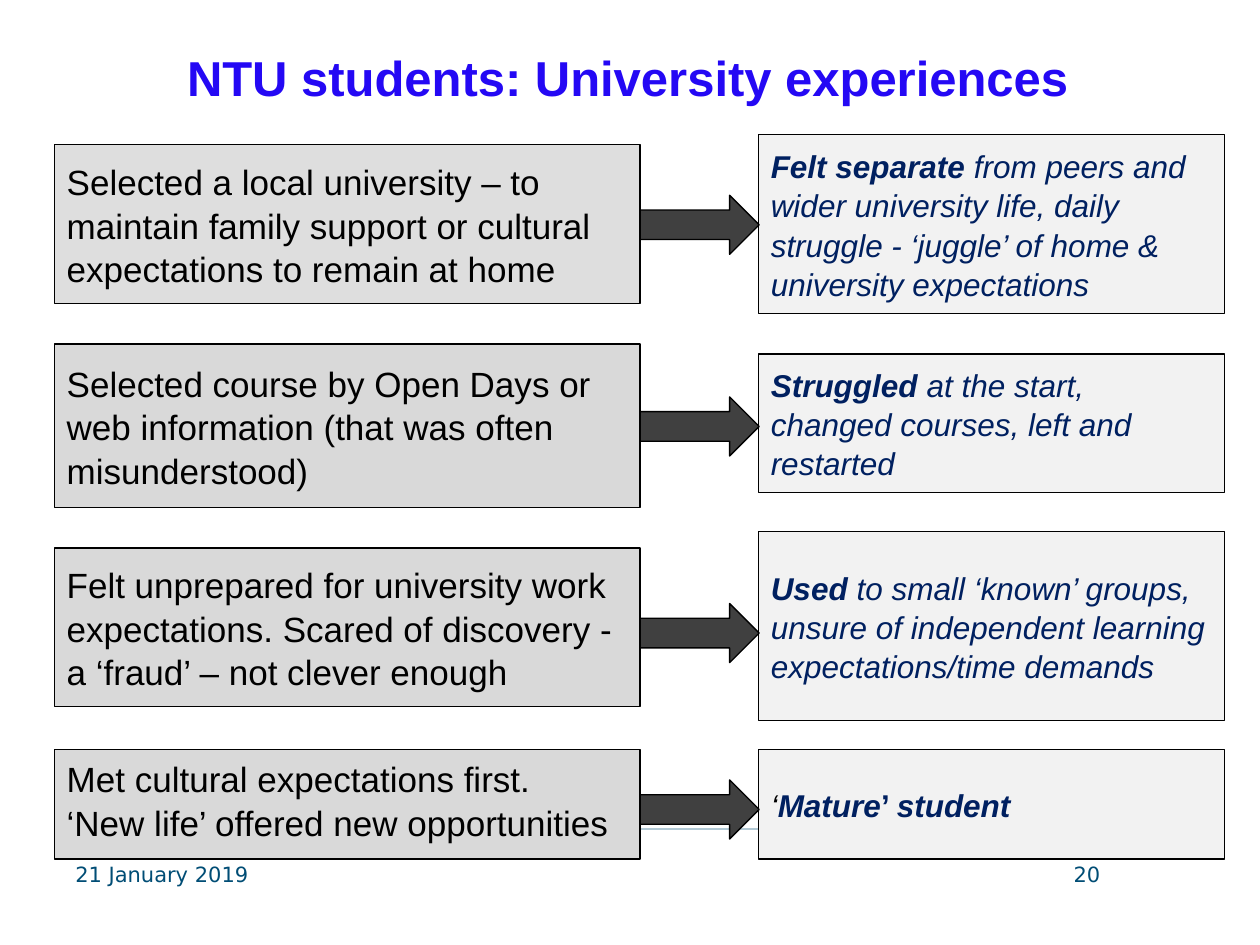
from lxml import etree
from pptx import Presentation
from pptx.dml.color import RGBColor
from pptx.enum.shapes import MSO_CONNECTOR, MSO_SHAPE
from pptx.enum.text import MSO_ANCHOR, PP_ALIGN
from pptx.oxml.ns import qn
from pptx.util import Pt

RECTANGLE = MSO_SHAPE.RECTANGLE
ARROW = MSO_SHAPE.RIGHT_ARROW
STRAIGHT = MSO_CONNECTOR.STRAIGHT
TOP, MIDDLE = MSO_ANCHOR.TOP, MSO_ANCHOR.MIDDLE
LEFT, CENTER, RIGHT = PP_ALIGN.LEFT, PP_ALIGN.CENTER, PP_ALIGN.RIGHT

COLORS = {
    "title": "2408F4",
    "footer": "004D75",
    "rule": "B2C9D5",
    "black": "000000",
    "navy": "002060",
    "first_cause": "DEDEDE",
    "cause": "D9D9D9",
    "effect": "F2F2F2",
    "arrow": "404040",
}

CAUSE_LEFT, CAUSE_WIDTH = 31, 334.8
ARROW_LEFT, ARROW_WIDTH, ARROW_HEIGHT = 365.8, 68, 33.8
EFFECT_LEFT, EFFECT_WIDTH = 433.4, 266.4

BOLD = {"bold": True}
ROWS = [
    {
        "cause": (82.8, 90.7), "effect": (77, 102.2), "arrow": 111.6,
        "fill": "first_cause",
        "lines": ["Selected a local university – to maintain family support "
                  "or cultural expectations to remain at home"],
        "spans": [("Felt separate ", BOLD),
                  ("from peers and wider university life, daily struggle - "
                   "‘juggle’ of home & university expectations", {})],
    },
    {
        "cause": (196.6, 93.6), "effect": (202.3, 79.2), "arrow": 226.8,
        "lines": ["Selected course by Open Days or web information "
                  "(that was often misunderstood)"],
        "spans": [("Struggled ", BOLD),
                  ("at the start, changed courses, left and restarted", {})],
    },
    {
        "cause": (313.2, 90.7), "effect": (303.8, 108), "arrow": 344.9,
        "lines": ["Felt unprepared for university work expectations. "
                  "Scared of discovery - a ‘fraud’ – not clever enough"],
        "spans": [("Used ", BOLD),
                  ("to small ‘known’ groups, unsure of independent learning "
                   "expectations/time demands", {})],
    },
    {
        "cause": (428.4, 62.6), "effect": (428.4, 62.6), "arrow": 445.7,
        "anchor": TOP,
        "lines": ["Met cultural expectations first.",
                  "‘New life’ offered new opportunities"],
        "spans": [("‘", {"color": "black"}), ("Mature", BOLD),
                  ("’ ", {"bold": True, "italic": False}), ("student", BOLD)],
    },
]


def rgb(name):
    return RGBColor.from_string(COLORS[name])


def add_span(para, text, size=20, color="black", font="Arial",
             bold=False, italic=False):
    span = para.add_run()
    span.text = text
    span.font.name = font
    span.font.size = Pt(size)
    span.font.bold = bold
    span.font.italic = italic
    span.font.color.rgb = rgb(color)


def write_paragraphs(shape, paragraphs, align=LEFT, anchor=TOP, spacing=1.0):
    frame = shape.text_frame
    frame.word_wrap = True
    frame.vertical_anchor = anchor
    for index, spans in enumerate(paragraphs):
        para = frame.add_paragraph() if index else frame.paragraphs[0]
        para.alignment = align
        para.line_spacing = spacing
        for text, style in spans:
            add_span(para, text, **style)


def add_label(page, box, text, align=LEFT, inset=3.6, **style):
    label = page.shapes.add_textbox(*map(Pt, box))
    label.text_frame.margin_top = Pt(inset)
    write_paragraphs(label, [[(text, style)]], align)


def add_block(page, kind, box, fill):
    block = page.shapes.add_shape(kind, *map(Pt, box))
    block.shadow.inherit = False
    block.fill.solid()
    block.fill.fore_color.rgb = rgb(fill)
    block.line.color.rgb = rgb("black")
    block.line.width = Pt(0.75)
    return block


def add_rule(page, left, right, top):
    rule = page.shapes.add_connector(STRAIGHT, Pt(right), Pt(top), Pt(left), Pt(top))
    rule.line.color.rgb = rgb("rule")
    rule.line.width = Pt(1.25)
    etree.SubElement(rule._element.spPr, qn("a:effectLst"))


def add_footer(page, left, top):
    style = {"size": 12, "color": "footer", "font": "DejaVu Sans"}
    width, height = 167.8, 37.4
    add_label(page, (left, top, width, height), "21 January 2019", **style)
    add_label(page, (left + 432, top, width, height), "20", align=RIGHT, **style)


def add_row(page, row):
    top, height = row["cause"]
    cause = add_block(page, RECTANGLE, (CAUSE_LEFT, top, CAUSE_WIDTH, height),
                      row.get("fill", "cause"))
    write_paragraphs(cause, [[(line, {})] for line in row["lines"]],
                     anchor=row.get("anchor", MIDDLE), spacing=1.04)

    top, height = row["effect"]
    effect = add_block(page, RECTANGLE, (EFFECT_LEFT, top, EFFECT_WIDTH, height),
                       "effect")
    base = {"size": 18, "color": "navy", "italic": True}
    write_paragraphs(effect, [[(text, base | style) for text, style in row["spans"]]],
                     anchor=MIDDLE, spacing=1.04)

    add_block(page, ARROW, (ARROW_LEFT, row["arrow"], ARROW_WIDTH, ARROW_HEIGHT),
              "arrow")


def main():
    deck = Presentation()
    deck.slide_width, deck.slide_height = Pt(720), Pt(540)
    page = deck.slides.add_slide(deck.slide_layouts[6])
    add_rule(page, 36, 684, 473.8)
    add_label(page, (31.7, 20.2, 653.8, 73.4), "NTU students: University experiences",
              align=CENTER, inset=7, size=28, color="title", bold=True)
    add_footer(page, 36, 488.9)
    for row in ROWS:
        add_row(page, row)
    deck.save("out.pptx")


if __name__ == "__main__":
    main()
